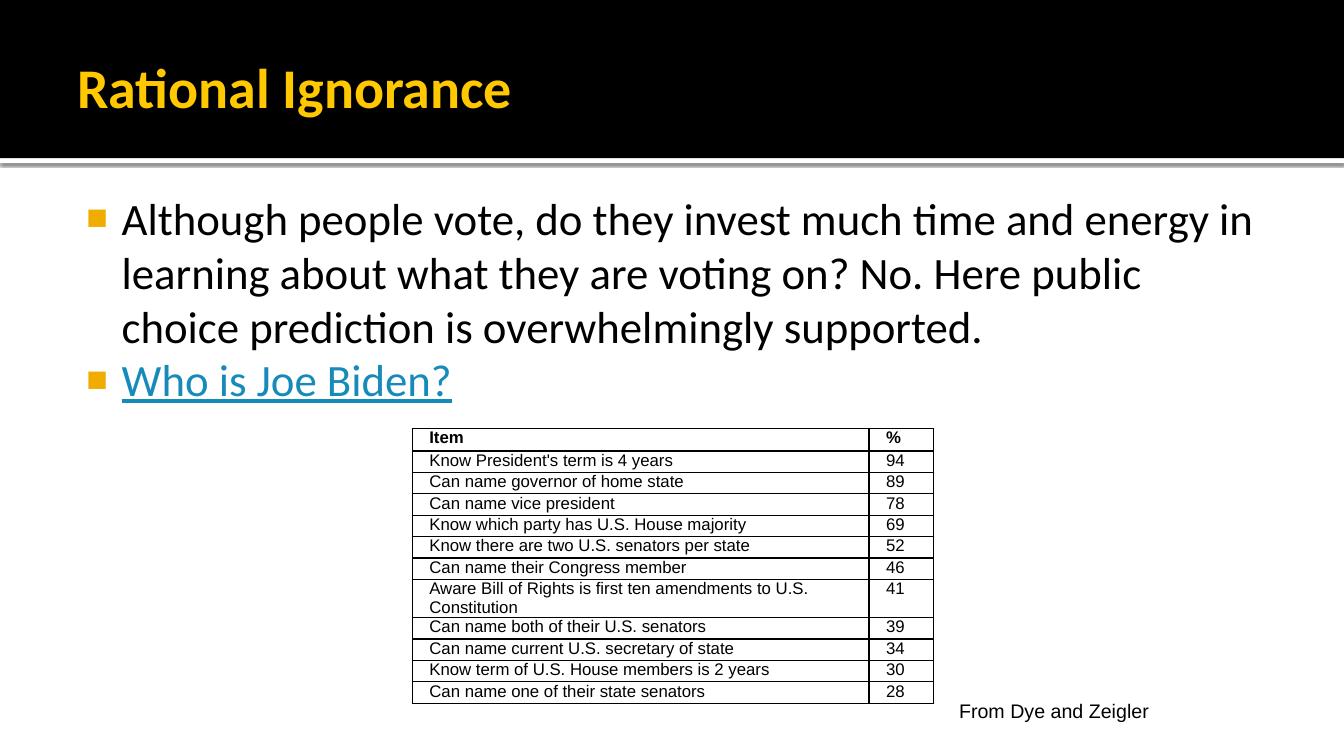
from dataclasses import dataclass
from lxml.etree import SubElement
from pptx import Presentation
from pptx.dml.color import RGBColor as RGB
from pptx.enum.shapes import MSO_SHAPE as Kind
from pptx.enum.text import MSO_ANCHOR as Anchor, MSO_AUTO_SIZE as Fit, PP_ALIGN as Align
from pptx.oxml import parse_xml
from pptx.oxml.ns import nsdecls, qn
from pptx.util import Pt


@dataclass(frozen=True)
class Theme:
    black: str = "000000"
    white: str = "FFFFFF"
    gold: str = "FFC800"
    amber: str = "F0AD00"
    link: str = "168BBA"
    head: str = "Calibri"
    plain: str = "Arial"
    title: int = 40
    body: int = 32
    cell: int = 12
    note: int = 14


theme = Theme()


def style(par, face, size, color, bold=False):
    for run in par.runs:
        font = run.font
        font.name, font.size, font.bold = face, Pt(size), bold
        font.color.rgb = RGB.from_string(color)


def place(shape, left, top, width, height, pads):
    shape.left, shape.top = Pt(left), Pt(top)
    shape.width, shape.height = Pt(width), Pt(height)
    frame = shape.text_frame
    frame.word_wrap, frame.auto_size = True, Fit.NONE
    frame.margin_left, frame.margin_top, frame.margin_right, frame.margin_bottom = map(Pt, pads)
    return frame


deck = Presentation()
deck.slide_width, deck.slide_height = Pt(960), Pt(540)
slide = deck.slides.add_slide(deck.slide_layouts[1])
shapes = slide.shapes
title, body = shapes.title, slide.placeholders[1]

for top, height, color in [(113, 3.6, theme.white), (0, 113, theme.black)]:
    band = shapes.add_shape(Kind.RECTANGLE, 0, Pt(top), Pt(960), Pt(height))
    band.shadow.inherit = False
    band.fill.solid()
    band.fill.fore_color.rgb = RGB.from_string(color)
    band.line.fill.background()
    title.element.addprevious(band.element)
    if color == theme.white:
        glow = band.element.spPr.find(qn("a:effectLst"))
        glow.append(parse_xml(
            f'<a:outerShdw {nsdecls("a")} blurRad="{Pt(2.5)}" dist="{Pt(0.8)}" dir="5400000" '
            f'algn="tl" rotWithShape="0"><a:srgbClr val="{theme.black}">'
            '<a:alpha val="60000"/></a:srgbClr></a:outerShdw>'))

frame = place(title, 48, 12.2, 864, 98.6, (7.2, 3.6, 3.6, 3.6))
frame.text = "Rational Ignorance"
frame.vertical_anchor = Anchor.MIDDLE
frame.paragraphs[0].alignment = Align.LEFT
style(frame.paragraphs[0], theme.head, theme.title, theme.gold, True)

frame = place(body, 48, 129, 864, 375, (4.3, 7.2, 7.2, 3.6))
frame.text = (
    "Although people vote, do they invest much time and energy in learning about what "
    "they are voting on? No. Here public choice prediction is overwhelmingly supported.\n"
    "Who is Joe Biden?")
for par, color in zip(frame.paragraphs, (theme.black, theme.link)):
    par.space_before = Pt(0)
    style(par, theme.head, theme.body, color)
    props = par._p.get_or_add_pPr()
    props.set("marL", str(Pt(34.6)))
    props.set("indent", str(Pt(-25.2)))
    SubElement(SubElement(props, qn("a:buClr")), qn("a:srgbClr"), val=theme.amber)
    SubElement(props, qn("a:buSzPct"), val="80000")
    SubElement(props, qn("a:buFont"), typeface=theme.plain)
    SubElement(props, qn("a:buChar"), char="■")
frame.paragraphs[1].runs[0].font.underline = True

rows = [
    ("Item", "%"),
    ("Know President's term is 4 years", "94"),
    ("Can name governor of home state", "89"),
    ("Can name vice president", "78"),
    ("Know which party has U.S. House majority", "69"),
    ("Know there are two U.S. senators per state", "52"),
    ("Can name their Congress member", "46"),
    ("Aware Bill of Rights is first ten amendments to U.S. Constitution", "41"),
    ("Can name both of their U.S. senators", "39"),
    ("Can name current U.S. secretary of state", "34"),
    ("Know term of U.S. House members is 2 years", "30"),
    ("Can name one of their state senators", "28"),
]
tall = {0: 16.2, 7: 27.3}
highs = [tall.get(i, 15.3) for i in range(len(rows))]
grid = shapes.add_table(len(rows), 2, Pt(294.5), Pt(306), Pt(372.5), Pt(sum(highs))).table
grid.first_row = grid.horz_banding = False
grid.columns[0].width, grid.columns[1].width = Pt(326.3), Pt(46.2)
for i, row in enumerate(rows):
    grid.rows[i].height = Pt(highs[i])
    for j, text in enumerate(row):
        cell = grid.cell(i, j)
        cell.text = text
        cell.margin_left = cell.margin_right = Pt(12.2)
        cell.margin_top = cell.margin_bottom = 0
        style(cell.text_frame.paragraphs[0], theme.plain, theme.cell, theme.black, i == 0)
        props = cell._tc.get_or_add_tcPr()
        for side in ("lnL", "lnR", "lnT", "lnB"):
            edge = SubElement(props, qn(f"a:{side}"), w=str(Pt(1)))
            SubElement(SubElement(edge, qn("a:solidFill")), qn("a:srgbClr"), val=theme.black)
        cell.fill.background()

note = shapes.add_textbox(Pt(678), Pt(495.4), Pt(150.5), Pt(24.5))
frame = note.text_frame
frame.word_wrap, frame.auto_size = False, Fit.SHAPE_TO_FIT_TEXT
frame.text = "From Dye and Zeigler"
style(frame.paragraphs[0], theme.plain, theme.note, theme.black)

deck.save("out.pptx")
